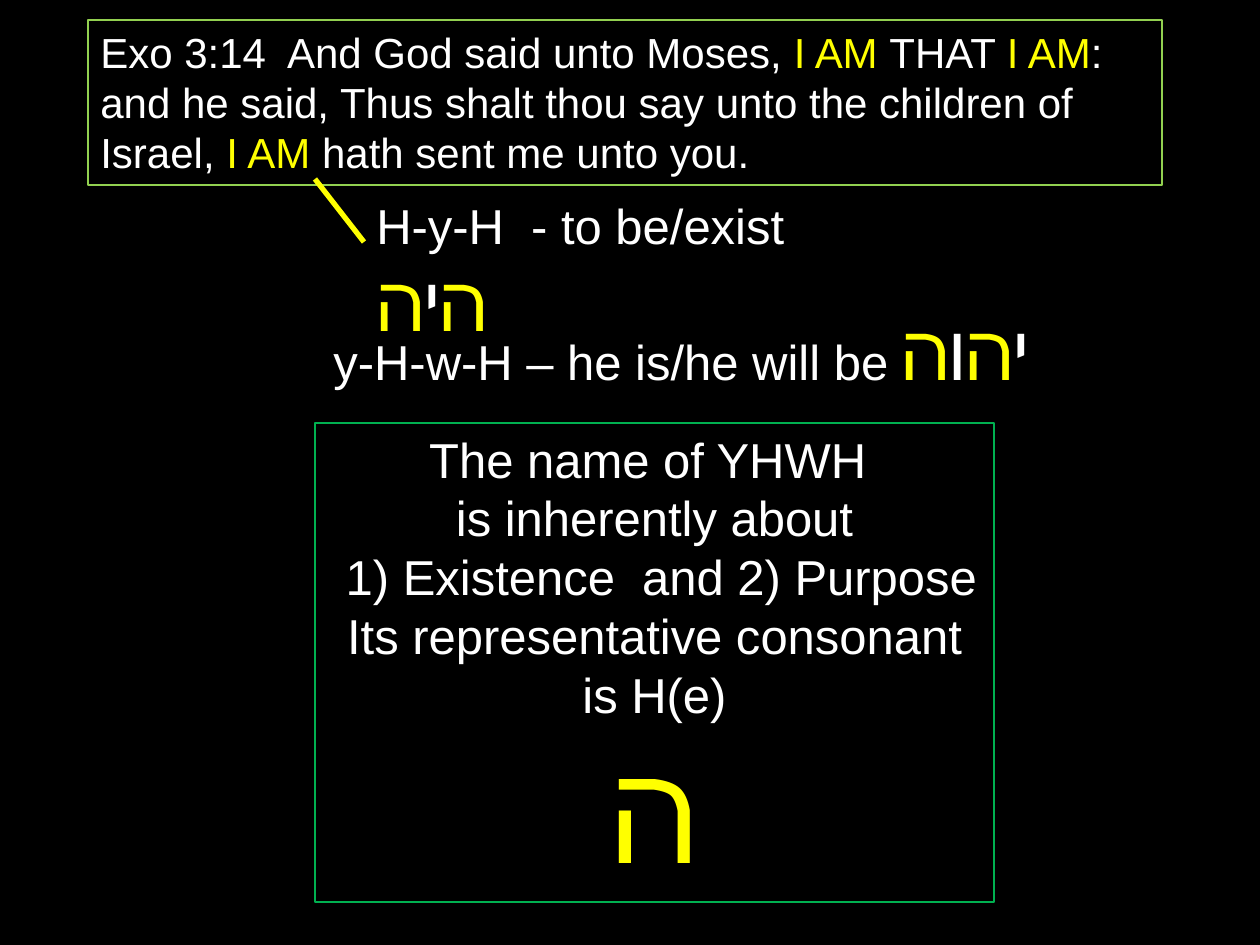
from dataclasses import dataclass
from typing import Optional

from lxml import etree
from pptx import Presentation
from pptx import util as u
from pptx.dml.color import RGBColor
from pptx.enum import shapes, text
from pptx.oxml import ns

PX = 914400 // 126
BLACK = RGBColor(0x00, 0x00, 0x00)
WHITE = RGBColor(0xFF, 0xFF, 0xFF)
YELLOW = RGBColor(0xFF, 0xFF, 0x00)
LIME = RGBColor(0x92, 0xD0, 0x50)
GREEN = RGBColor(0x00, 0xB0, 0x50)


@dataclass(frozen=True)
class Bit:
    words: str
    color: RGBColor = WHITE
    size: int = 28
    font: str = "Arial"


@dataclass(frozen=True)
class Box:
    left: int
    top: int
    width: int
    height: int
    lines: list[list[Bit]]
    edge: Optional[RGBColor] = None
    align: text.PP_ALIGN = text.PP_ALIGN.LEFT


def verse(words: str, color: RGBColor = WHITE) -> Bit:
    return Bit(words, color, 24)


def glyph(words: str, color: RGBColor = YELLOW, size: int = 44) -> Bit:
    return Bit(words, color, size, "Calibri")


BOXES = [
    Box(364, 189, 567, 106, [
        [Bit("H-y-H  - to be/exist  "), glyph("ה"), glyph("י", WHITE), glyph("ה")],
    ]),
    Box(88, 20, 1074, 165, [[
        verse("Exo 3:14  And God said unto Moses, "),
        verse("I AM ", YELLOW),
        verse("THAT "),
        verse("I AM", YELLOW),
        verse(": and he said, Thus shalt thou say unto the children of Israel, "),
        verse("I AM ", YELLOW),
        verse("hath sent me unto you."),
    ]], LIME),
    Box(321, 297, 764, 106, [[
        Bit("y-H-w-H – he is/he will be "),
        glyph("י", WHITE),
        glyph("ה"),
        glyph("ו", WHITE),
        glyph("ה"),
        Bit(" "),
    ]]),
    Box(315, 423, 679, 479, [
        [Bit("The name of YHWH ")],
        [Bit("is inherently about")],
        [Bit(" 1) Existence  and 2) Purpose")],
        [Bit("Its representative consonant is H(e)")],
        [glyph("ה", size=80)],
    ], GREEN, text.PP_ALIGN.CENTER),
]


def draw_box(slide, box: Box) -> None:
    area = [n * PX for n in (box.left, box.top, box.width, box.height)]
    if box.edge is None:
        shape = slide.shapes.add_textbox(*area)
    else:
        shape = slide.shapes.add_shape(shapes.MSO_SHAPE.RECTANGLE, *area)
        shape.shadow.inherit = False
        shape.fill.background()
        shape.line.color.rgb = box.edge
        shape.line.width = u.Pt(0.75)
    frame = shape.text_frame
    frame.word_wrap = True
    frame.auto_size = text.MSO_AUTO_SIZE.SHAPE_TO_FIT_TEXT
    frame.vertical_anchor = text.MSO_ANCHOR.TOP
    for i, line in enumerate(box.lines):
        para = frame.add_paragraph() if i else frame.paragraphs[0]
        para.alignment = box.align
        for bit in line:
            run = para.add_run()
            run.text = bit.words
            run.font.name = bit.font
            run.font.size = u.Pt(bit.size)
            run.font.color.rgb = bit.color


def draw_line(slide, x1: int, y1: int, x2: int, y2: int) -> None:
    ends = [n * PX for n in (x1, y1, x2, y2)]
    line = slide.shapes.add_connector(shapes.MSO_CONNECTOR.STRAIGHT, *ends)
    line.line.color.rgb = YELLOW
    line.line.width = u.Pt(3)
    etree.SubElement(line._element.spPr, ns.qn("a:effectLst"))


def main() -> None:
    deck = Presentation()
    deck.slide_width = u.Inches(10)
    deck.slide_height = u.Inches(7.5)
    slide = deck.slides.add_slide(deck.slide_layouts[6])
    slide.background.fill.solid()
    slide.background.fill.fore_color.rgb = BLACK
    for box in BOXES:
        draw_box(slide, box)
    draw_line(slide, 364, 242, 315, 179)
    deck.save("out.pptx")


if __name__ == "__main__":
    main()
